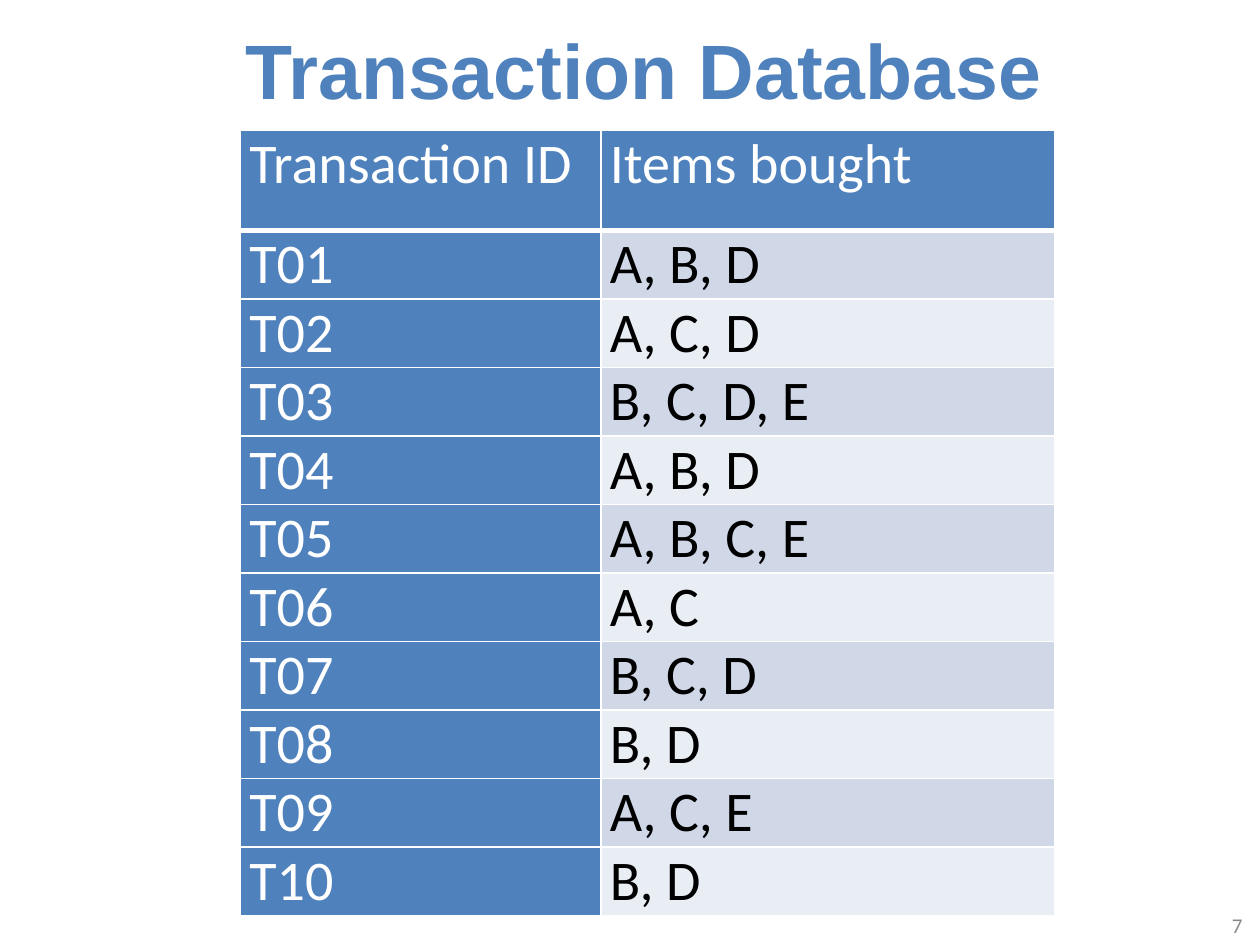
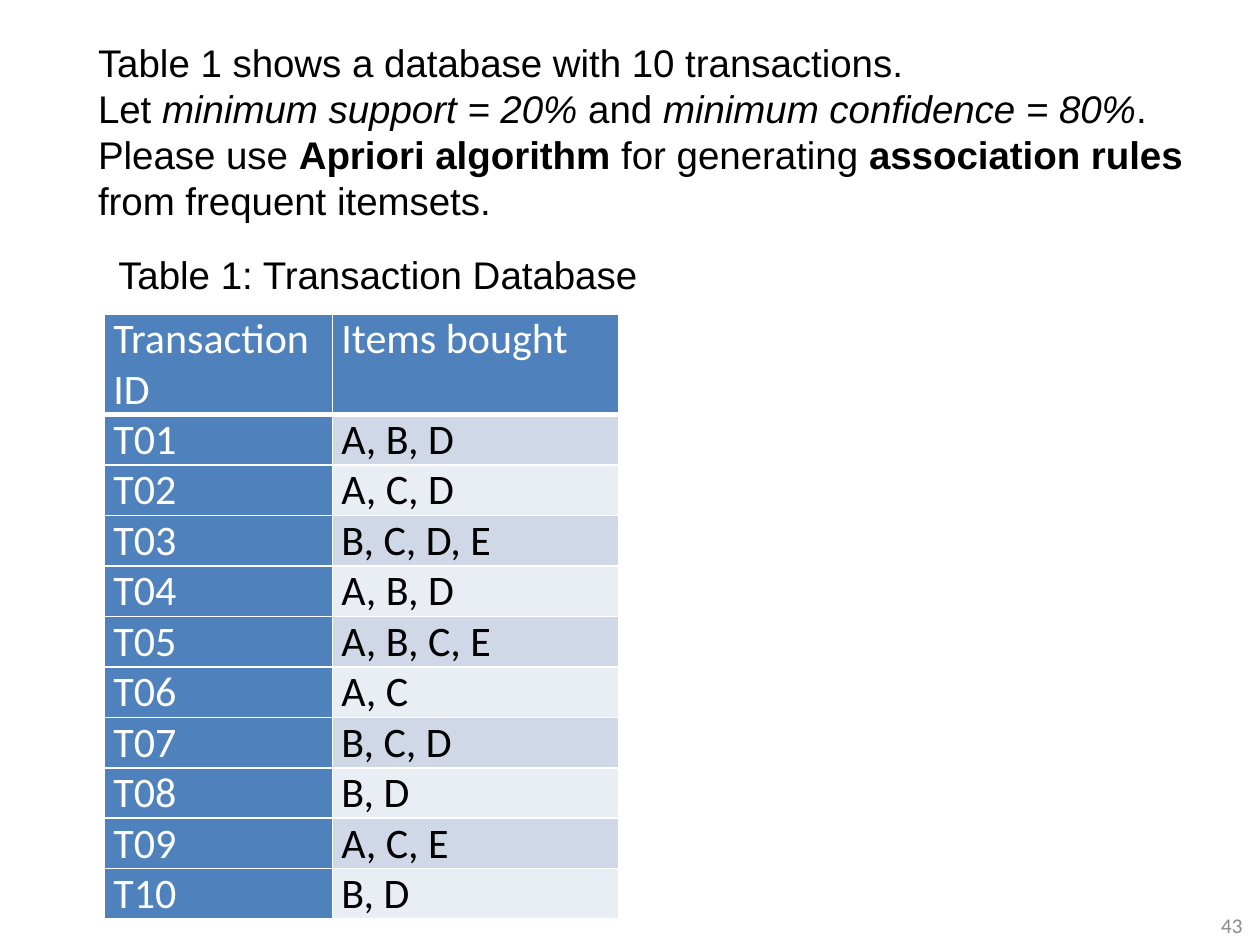
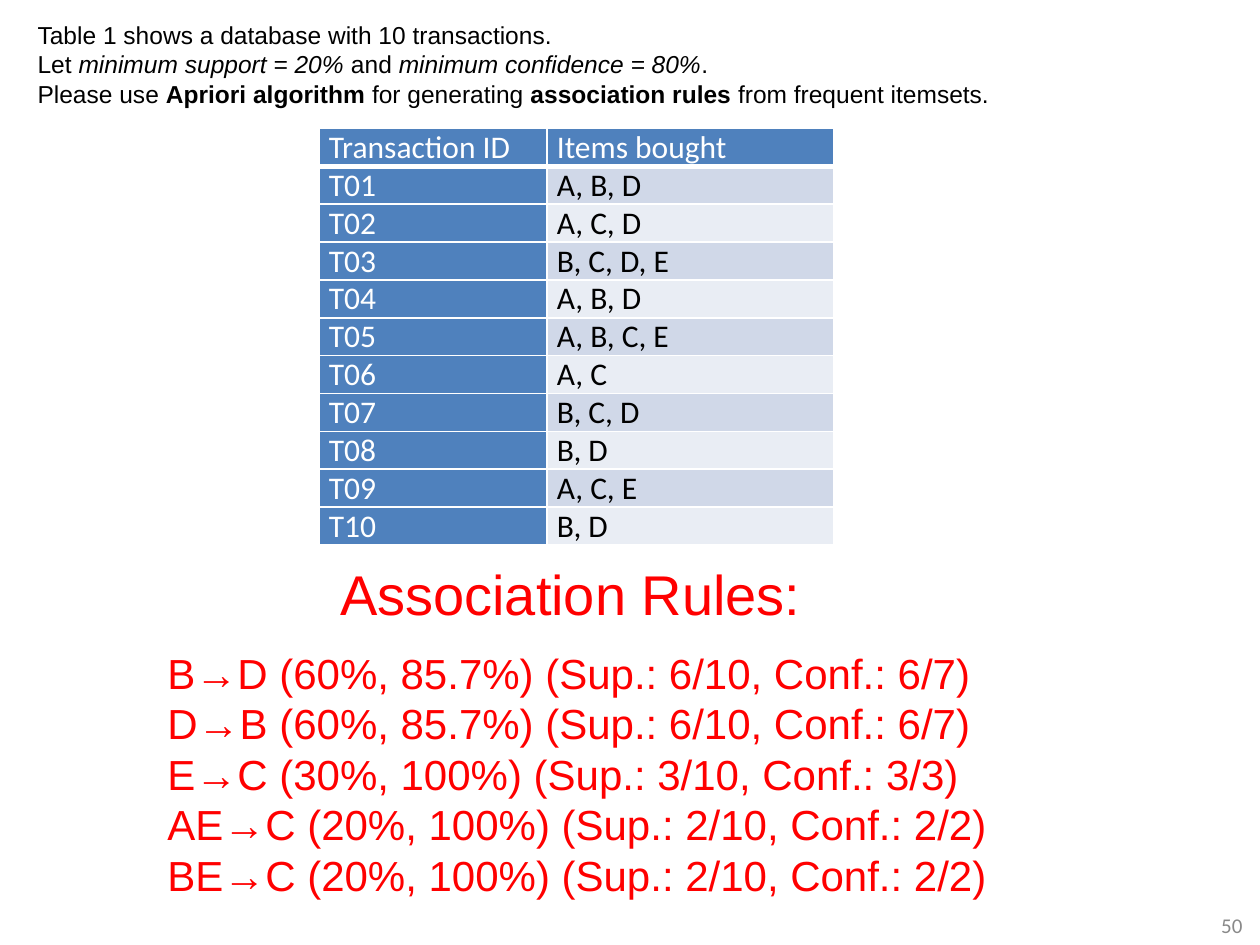
from lxml import etree
from pptx import Presentation, util as u
from pptx.dml.color import RGBColor
from pptx.enum import text
from pptx.oxml import ns

BLUE, WHITE, BLACK, RED, GREY = "4F81BD", "FFFFFF", "000000", "FF0000", "898989"
BANDS = ["D0D8E8", "E9EDF4"]
colour = RGBColor.from_string

TRANSACTIONS = [("Transaction ID", "Items bought")] + [
    (f"T{number:02}", items)
    for number, items in enumerate(
        ["A, B, D", "A, C, D", "B, C, D, E", "A, B, D", "A, B, C, E",
         "A, C", "B, C, D", "B, D", "A, C, E", "B, D"], 1)
]
ITALIC, BOLD = {"italic": True}, {"bold": True}
TASK = [[
    ("Table 1 shows a database with 10 transactions.", {}),
    ("\n", {}),
    ("Let", {}),
    (" minimum support = 20%", ITALIC),
    (" and ", {}),
    ("minimum confidence = 80%", ITALIC),
    (".", {}),
    ("\n", {}),
    ("Please use ", {}),
    ("Apriori algorithm", BOLD),
    (" for generating", {}),
    (" association rules", BOLD),
    (" from frequent itemsets.", {}),
]]
RULES = [
    "B→D (60%, 85.7%) (Sup.: 6/10, Conf.: 6/7)",
    "D→B (60%, 85.7%) (Sup.: 6/10, Conf.: 6/7)",
    "E→C (30%, 100%) (Sup.: 3/10, Conf.: 3/3)",
    "AE→C (20%, 100%) (Sup.: 2/10, Conf.: 2/2)",
    "BE→C (20%, 100%) (Sup.: 2/10, Conf.: 2/2)",
]


def write(frame, paragraphs, size, color, font="Arial", align=None, bold=False):
    for index, content in enumerate(paragraphs):
        para = frame.paragraphs[0] if index == 0 else frame.add_paragraph()
        para.alignment = align
        spans = [(content, {})] if isinstance(content, str) else content
        for words, style in spans:
            if words == "\n":
                para.add_line_break()
                continue
            span = para.add_run()
            span.text = words
            span.font.color.rgb = colour(color)
            look = {"name": font, "size": u.Pt(size), "bold": bold, **style}
            for key, value in look.items():
                setattr(span.font, key, value)


def add_text(page, at, paragraphs, size, color, wrap=False, **look):
    box = page.shapes.add_textbox(*map(u.Inches, at))
    box.text_frame.word_wrap = wrap
    box.text_frame.auto_size = text.MSO_AUTO_SIZE.SHAPE_TO_FIT_TEXT
    write(box.text_frame, paragraphs, size, color, **look)
    return box


deck = Presentation()
deck.slide_width, deck.slide_height = u.Inches(10), u.Inches(7.5)

layouts = [
    {"number": "7", "at": (1.91, 1.03), "columns": (2.86, 3.6),
     "header": 0.8, "row": 0.53, "size": 32, "inset": 0.07},
    {"number": "43", "at": (0.83, 2.49), "columns": (1.81, 2.27),
     "header": 0.8, "row": 0.4, "size": 24, "inset": 0.07},
    {"number": "50", "at": (2.53, 1.02), "columns": (1.81, 2.28),
     "header": 0.3, "row": 0.3, "size": 18, "inset": 0.08},
]
pages = []
for layout in layouts:
    page = deck.slides.add_slide(deck.slide_layouts[6])
    pages.append(page)
    footer = add_text(page, (9.33, 7.22, 0.63, 0.25), [layout["number"]], 12, GREY,
                      wrap=True, font="Calibri", align=text.PP_ALIGN.RIGHT)
    footer.text_frame.auto_size = text.MSO_AUTO_SIZE.NONE
    footer.text_frame.vertical_anchor = text.MSO_ANCHOR.MIDDLE

    heights = [layout["header"]] + [layout["row"]] * (len(TRANSACTIONS) - 1)
    extent = (*layout["at"], sum(layout["columns"]), sum(heights))
    table = page.shapes.add_table(len(TRANSACTIONS), 2, *map(u.Inches, extent)).table
    for column, width in zip(table.columns, layout["columns"]):
        column.width = u.Inches(width)
    for row, height in zip(table.rows, heights):
        row.height = u.Inches(height)

    for r, record in enumerate(TRANSACTIONS):
        for c, words in enumerate(record):
            cell = table.cell(r, c)
            inset = u.Inches(layout["inset"])
            margins = {"margin_left": inset, "margin_right": inset,
                       "margin_top": 0, "margin_bottom": 0}
            for key, value in margins.items():
                setattr(cell, key, value)
            properties = cell._tc.get_or_add_tcPr()
            for side in "LRTB":
                width = 3 if r == 0 and side == "B" else 1
                line = etree.SubElement(properties, ns.qn(f"a:ln{side}"), w=str(u.Pt(width)))
                fill = etree.SubElement(line, ns.qn("a:solidFill"))
                etree.SubElement(fill, ns.qn("a:srgbClr"), val=WHITE)
            labelled = r == 0 or c == 0
            cell.fill.solid()
            cell.fill.fore_color.rgb = colour(BLUE if labelled else BANDS[(r - 1) % 2])
            write(cell.text_frame, [words], layout["size"],
                  WHITE if labelled else BLACK, font="Calibri")

database, exercise, answer = pages
add_text(database, (1.85, 0.13, 6.58, 0.84), ["Transaction Database"], 44, BLUE, bold=True)

add_text(exercise, (0.68, 0.26, 8.97, 1.58), TASK, 22, BLACK, wrap=True)
add_text(exercise, (0.84, 1.94, 4.38, 0.47), ["Table 1: Transaction Database"], 22, BLACK)

add_text(answer, (0.2, 0.11, 9.53, 0.81), TASK, 14, BLACK, wrap=True)
add_text(answer, (2.6, 4.39, 4.02, 0.64), ["Association Rules:"], 32, RED)
add_text(answer, (1.23, 5.09, 6.76, 2.12), RULES, 24, RED)

deck.save("out.pptx")
